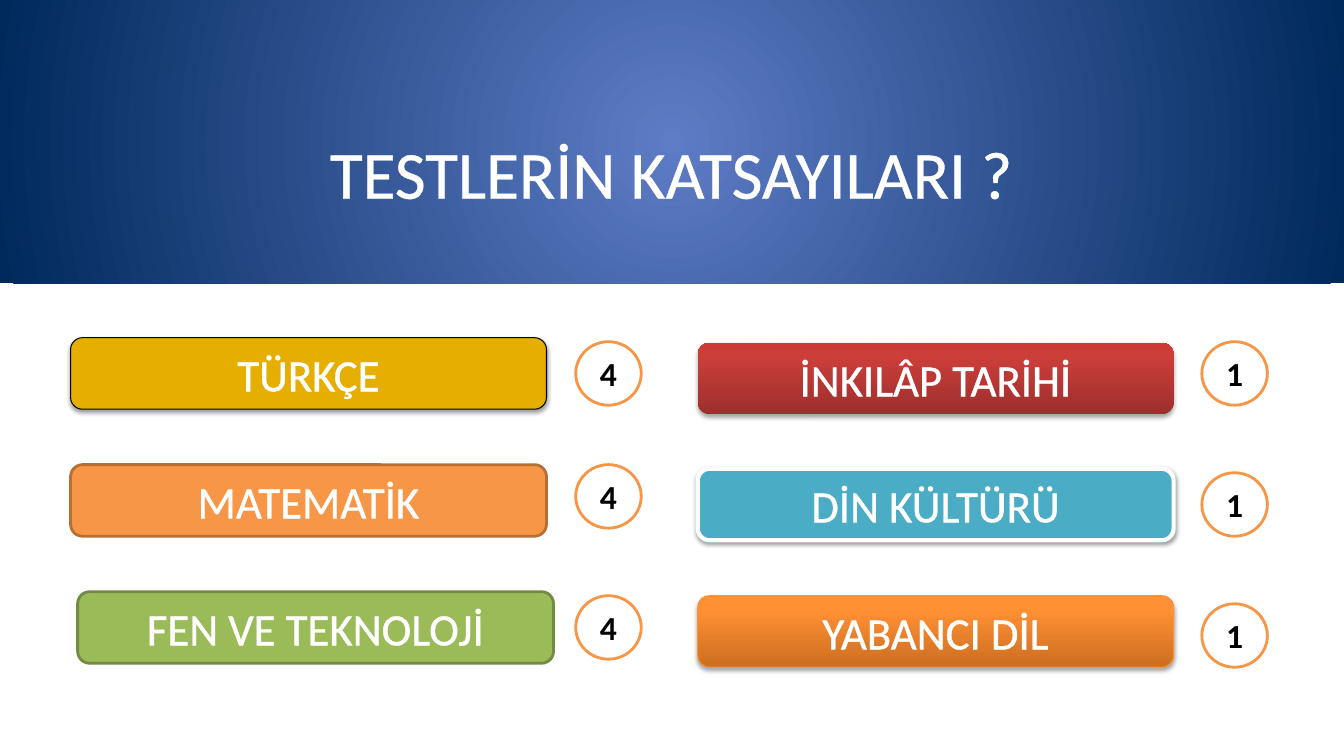
import pptx
import pptx.util
import pptx.dml.color
import pptx.enum.shapes
import pptx.enum.text
import pptx.oxml
import pptx.oxml.ns

HEX = {
    "white": "FFFFFF", "black": "000000", "gold": "E6AF00",
    "orange": "F79646", "rust": "B76F34", "green": "9BBB59",
    "moss": "738A42", "teal": "4BACC6", "flame": "F69240",
    "sky": "5E7CC5", "navy": "00295C",
    "red1": "9C2F2D", "red2": "CB3E3A", "red3": "CE3B37",
    "fire1": "CC6E20", "fire2": "FF9034", "fire3": "FF9136",
}
WIDE, HIGH = 1333, 750
TITLE = "TESTLERİN KATSAYILARI ?"
BAND = (0, 0, WIDE, 281)
HEAD = (100, 81, 1132, 179)
BAR = (472, 71)
DISC = (65, 63)
RED = [(0, "red1"), (80, "red2"), (100, "red3")]
FIRE = [(0, "fire1"), (80, "fire2"), (100, "fire3")]
SOFT = {"alpha": 38, "dist": 1.6}
DEEP = {"alpha": 35, "dist": 1.8}

# name, left, top, fill, (line, width), shadow
TESTS = [
    ("TÜRKÇE", 70, 335, "gold", ("black", 0.75), SOFT),
    ("MATEMATİK", 70, 461, "orange", ("rust", 2), None),
    ("FEN VE TEKNOLOJİ", 77, 587, "green", ("moss", 2), None),
    ("İNKILÂP TARİHİ", 692, 340, RED, None, DEEP),
    ("DİN KÜLTÜRÜ", 692, 465, "teal", ("white", 3), SOFT),
    ("YABANCI DİL", 692, 591, FIRE, ("flame", 0.75), DEEP),
]
# weight, left, tops
MARKS = [("4", 571, (339, 461, 591)), ("1", 1192, (339, 469, 599))]

BIG = {"size": pptx.util.Pt(48), "name": "Calibri"}
MID = {"size": pptx.util.Pt(32), "name": "Calibri"}
BOLD = {"size": pptx.util.Pt(24), "name": "Calibri", "bold": True}
KIND = pptx.enum.shapes.MSO_SHAPE
NS = pptx.oxml.ns.nsdecls("a")


def px(n):
    return pptx.util.Emu(n * 9144)


def rgb(name):
    return pptx.dml.color.RGBColor.from_string(HEX[name])


def node(xml):
    return pptx.oxml.parse_xml(xml.replace(">", f" {NS}>", 1))


def blend(shape, stops, way):
    """Fill with gradient stops; way is the XML for its direction."""
    shape.fill.gradient()
    grad = shape.fill._xPr.find(pptx.oxml.ns.qn("a:gradFill"))
    for part in list(grad):
        grad.remove(part)
    marks = "".join(
        f'<a:gs pos="{pos * 1000}"><a:srgbClr val="{HEX[name]}"/></a:gs>'
        for pos, name in stops)
    grad.append(node(f"<a:gsLst>{marks}</a:gsLst>"))
    grad.append(node(way))


def shade(shape, alpha, dist):
    list_ = shape._element.spPr.find(pptx.oxml.ns.qn("a:effectLst"))
    list_.append(node(
        f'<a:outerShdw blurRad="{pptx.util.Pt(3.1)}" '
        f'dist="{pptx.util.Pt(dist)}" dir="5400000" rotWithShape="0">'
        f'<a:srgbClr val="{HEX["black"]}"><a:alpha val="{alpha * 1000}"/>'
        '</a:srgbClr></a:outerShdw>'))


def write(shape, text, look, ink="white", edge=True):
    frame = shape.text_frame
    frame.word_wrap = True
    frame.vertical_anchor = pptx.enum.text.MSO_ANCHOR.MIDDLE
    para = frame.paragraphs[0]
    para.alignment = pptx.enum.text.PP_ALIGN.CENTER
    run = para.add_run()
    run.text = text
    for key, val in look.items():
        setattr(run.font, key, val)
    run.font.color.rgb = rgb(ink)
    if edge:
        run.font._element.insert(0, node(
            f'<a:ln w="{pptx.util.Pt(1.45)}"><a:solidFill>'
            f'<a:srgbClr val="{HEX[ink]}"/></a:solidFill></a:ln>'))


def draw(slide, kind, box, fill, line=None, shadow=None):
    shape = slide.shapes.add_shape(kind, *map(px, box))
    shape.shadow.inherit = False
    if isinstance(fill, list):
        blend(shape, fill, '<a:lin ang="16200000" scaled="0"></a:lin>')
    else:
        shape.fill.solid()
        shape.fill.fore_color.rgb = rgb(fill)
    if line:
        shape.line.color.rgb = rgb(line[0])
        shape.line.width = pptx.util.Pt(line[1])
    else:
        shape.line.fill.background()
    if shadow:
        shade(shape, **shadow)
    return shape


def main():
    deck = pptx.Presentation()
    deck.slide_width, deck.slide_height = px(WIDE), px(HIGH)
    slide = deck.slides.add_slide(deck.slide_layouts[6])

    band = draw(slide, KIND.RECTANGLE, BAND, "navy")
    blend(band, [(0, "sky"), (100, "navy")],
          '<a:path path="circle"><a:fillToRect l="50000" t="50000" '
          'r="50000" b="50000"/></a:path>')
    write(slide.shapes.add_textbox(*map(px, HEAD)), TITLE, BIG)

    for name, left, top, fill, line, shadow in TESTS:
        bar = draw(slide, KIND.FLOWCHART_ALTERNATE_PROCESS,
                   (left, top, *BAR), fill, line, shadow)
        write(bar, name, MID)

    for weight, left, tops in MARKS:
        for top in tops:
            disc = draw(slide, KIND.OVAL, (left, top, *DISC),
                        "white", ("orange", 2))
            write(disc, weight, BOLD, "black", False)

    deck.save("out.pptx")


if __name__ == "__main__":
    main()
